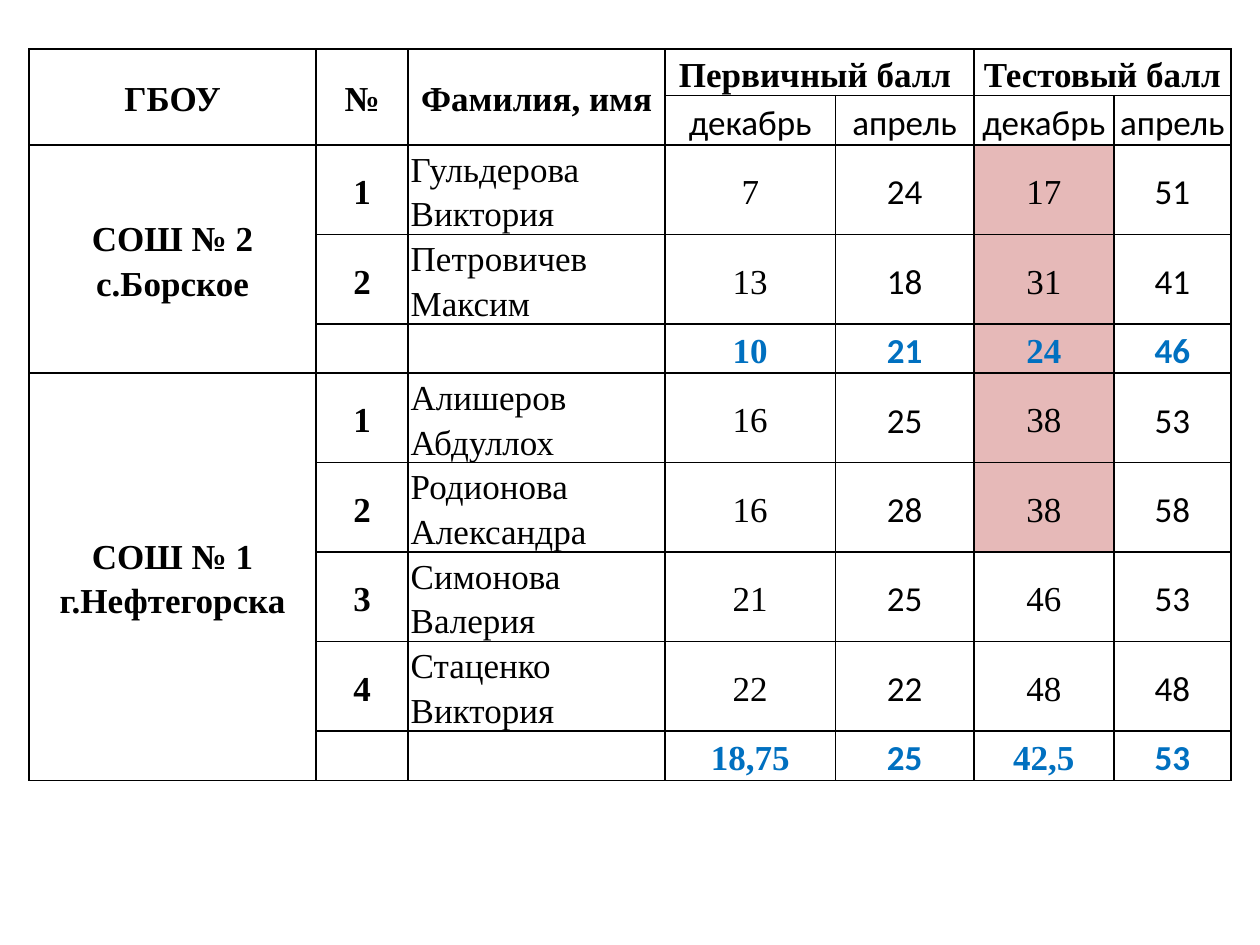
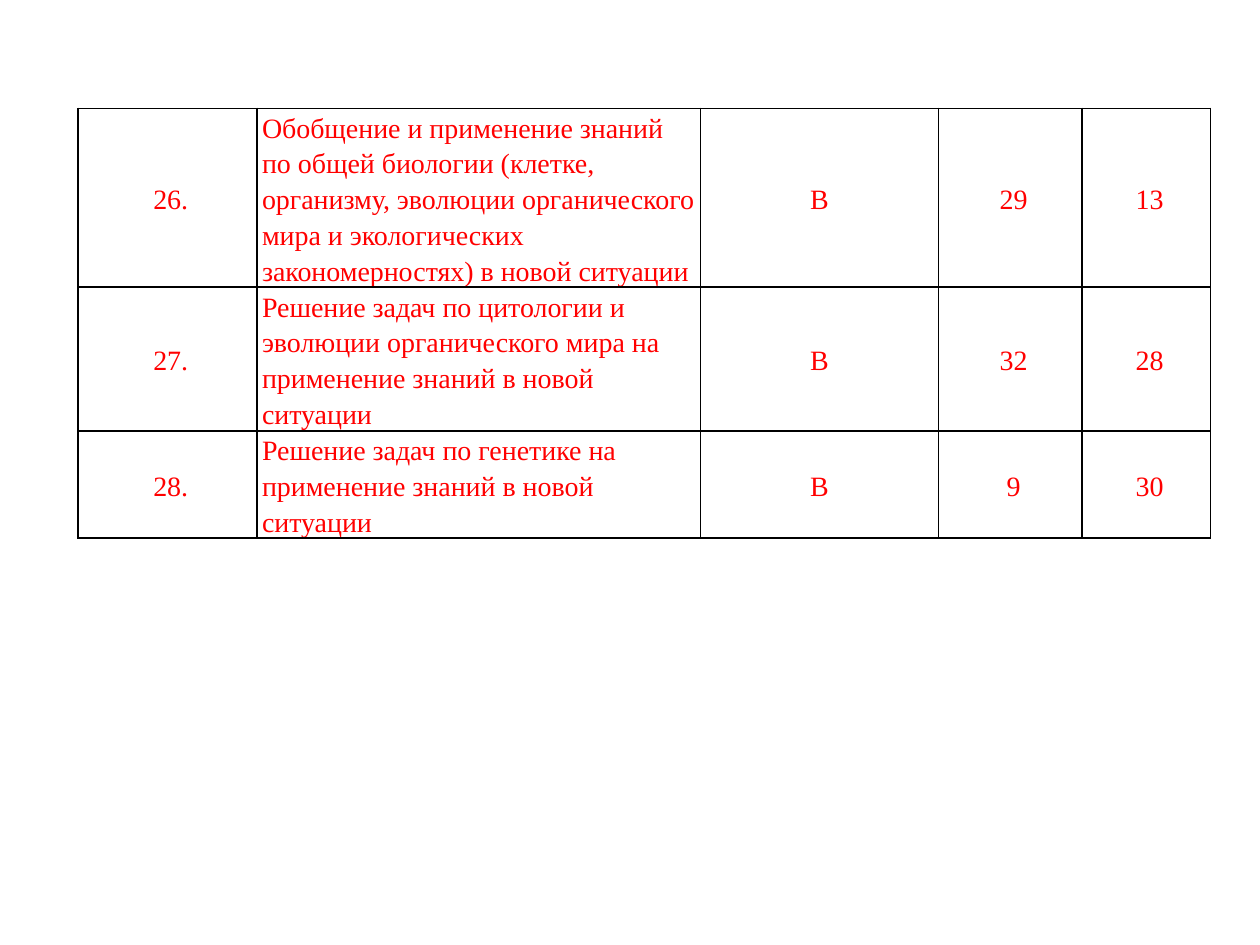
from lxml import etree
from pptx import Presentation
from pptx.dml.color import RGBColor
from pptx.enum.text import MSO_ANCHOR, PP_ALIGN
from pptx.oxml.ns import qn
from pptx.util import Inches, Pt

CENTER, LEFT = PP_ALIGN.CENTER, PP_ALIGN.LEFT
MIDDLE = MSO_ANCHOR.MIDDLE

COLORS = {"text": "000000", "average": "0070C0", "task": "FF0000",
          "low": "E6B9B8", "border": "000000"}
SERIF, SANS = "Times New Roman", "Calibri"

SCORE_COLS = [2.28, 0.73, 2.04, 1.35, 1.1, 1.11, 0.93]
NAME_COL, APRIL_COLS, TEST_DECEMBER_COL = 2, (4, 6), 5
HEADER_HEIGHTS = [0.37, 0.39]
PUPIL_HEIGHT, AVERAGE_HEIGHT = 0.71, 0.39
PASS_MARK = 42
HEADERS = [
    ["ГБОУ", "№", "Фамилия, имя", "Первичный балл ", "", "Тестовый балл", ""],
    ["", "", "", "декабрь", "апрель", "декабрь", "апрель"],
]
# Each school: its pupils with four scores, then the averages
SCHOOLS = [
    ("СОШ № 2 с.Борское",
     [("Гульдерова Виктория", "7", "24", "17", "51"),
      ("Петровичев Максим", "13", "18", "31", "41")],
     ("10", "21", "24", "46")),
    ("СОШ № 1 г.Нефтегорска",
     [("Алишеров Абдуллох", "16", "25", "38", "53"),
      ("Родионова Александра", "16", "28", "38", "58"),
      ("Симонова Валерия", "21", "25", "46", "53"),
      ("Стаценко Виктория", "22", "22", "48", "48")],
     ("18,75", "25", "42,5", "53")),
]

TASK_COLS = [1.42, 3.52, 1.89, 1.14, 1.02]
TASK_HEIGHTS = [1.42, 1.14, 0.85]
TASK_INDENTS = [0.05, 0, -0.08, 0.05, 0.05]
TASKS = [
    ("26.", "Обобщение и применение знаний по общей биологии (клетке, "
     "организму, эволюции органического мира и экологических "
     "закономерностях) в новой ситуации", "В", "29", "13"),
    ("27.", "Решение задач по цитологии и эволюции органического мира "
     "на применение знаний в новой ситуации", "В", "32", "28"),
    ("28.", "Решение задач по генетике на применение знаний в новой "
     "ситуации", "В", "9", "30"),
]


def rgb(name):
    return RGBColor.from_string(COLORS[name])


def add_borders(cell):
    tc_pr = cell._tc.get_or_add_tcPr()
    for side in ("a:lnL", "a:lnR", "a:lnT", "a:lnB"):
        line = etree.SubElement(tc_pr, qn(side), w=str(Pt(1)))
        fill = etree.SubElement(line, qn("a:solidFill"))
        etree.SubElement(fill, qn("a:srgbClr"), val=COLORS["border"])


def add_grid(slide, left, top, widths, heights, margin):
    """Add a plain table with thin borders and no fills."""
    frame = slide.shapes.add_table(
        len(heights), len(widths), Inches(left), Inches(top),
        Inches(sum(widths)), Inches(sum(heights)))
    table = frame.table
    table.first_row = table.horz_banding = False
    for column, width in zip(table.columns, widths):
        column.width = Inches(width)
    for row, height in zip(table.rows, heights):
        row.height = Inches(height)
    for cell in table.iter_cells():
        cell.margin_left = cell.margin_right = Inches(margin)
        cell.margin_top = cell.margin_bottom = 0
        cell.vertical_anchor = MIDDLE
        add_borders(cell)
        cell.fill.background()
    return table


def write_cell(cell, text, size, color="text", font=SERIF, bold=False,
               align=CENTER, indent=0):
    p = cell.text_frame.paragraphs[0]
    p.alignment = align
    p.line_spacing = 1.15
    if indent:
        p_pr = p._p.get_or_add_pPr()
        p_pr.set("marL", "0")
        p_pr.set("indent", str(Inches(indent)))
    r = p.add_run()
    r.text = text
    r.font.size = Pt(size)
    r.font.name = font
    r.font.bold = bold
    r.font.color.rgb = rgb(color)


def score_rows():
    """Return the text rows, the average row numbers and the school spans."""
    rows, averages, spans = list(HEADERS), [], []
    for school, pupils, means in SCHOOLS:
        first = len(rows)
        for number, pupil in enumerate(pupils, 1):
            rows.append([school if number == 1 else "", str(number), *pupil])
        averages.append(len(rows))
        spans.append((first, len(rows)))
        rows.append(["", "", "", *means])
    return rows, averages, spans


def is_low(text):
    return float(text.replace(",", ".")) < PASS_MARK


def add_score_table(slide):
    rows, averages, spans = score_rows()
    heights = HEADER_HEIGHTS + [
        AVERAGE_HEIGHT if i in averages else PUPIL_HEIGHT
        for i in range(len(HEADERS), len(rows))]
    table = add_grid(slide, 0.23, 0.39, SCORE_COLS, heights, 0.02)
    for col in range(3):
        table.cell(0, col).merge(table.cell(1, col))
    for col in (3, 5):
        table.cell(0, col).merge(table.cell(0, col + 1))
    for first, last in spans:
        table.cell(first, 0).merge(table.cell(last, 0))

    for i, row in enumerate(rows):
        average, body = i in averages, i >= len(HEADERS)
        for j, text in enumerate(row):
            if not text:
                continue
            sans = i == 1 or (body and j in APRIL_COLS)
            write_cell(table.cell(i, j), text, 20,
                       color="average" if average else "text",
                       font=SANS if sans else SERIF,
                       bold=i == 0 or j < NAME_COL or average,
                       align=LEFT if body and j == NAME_COL else CENTER)
        # An average is marked only when all the pupils above it are low
        if body and is_low(row[TEST_DECEMBER_COL]) or i == averages[0]:
            fill = table.cell(i, TEST_DECEMBER_COL).fill
            fill.solid()
            fill.fore_color.rgb = rgb("low")


def add_task_table(slide):
    table = add_grid(slide, 0.62, 0.86, TASK_COLS, TASK_HEIGHTS, 0.04)
    for i, task in enumerate(TASKS):
        for j, text in enumerate(task):
            write_cell(table.cell(i, j), text, 16, color="task",
                       align=LEFT if j == 1 else CENTER,
                       indent=TASK_INDENTS[j])


def main():
    prs = Presentation()
    prs.slide_width, prs.slide_height = Inches(10), Inches(7.5)
    blank = prs.slide_layouts[6]
    for add_content in (add_score_table, add_task_table):
        add_content(prs.slides.add_slide(blank))
    prs.save("out.pptx")


if __name__ == "__main__":
    main()
